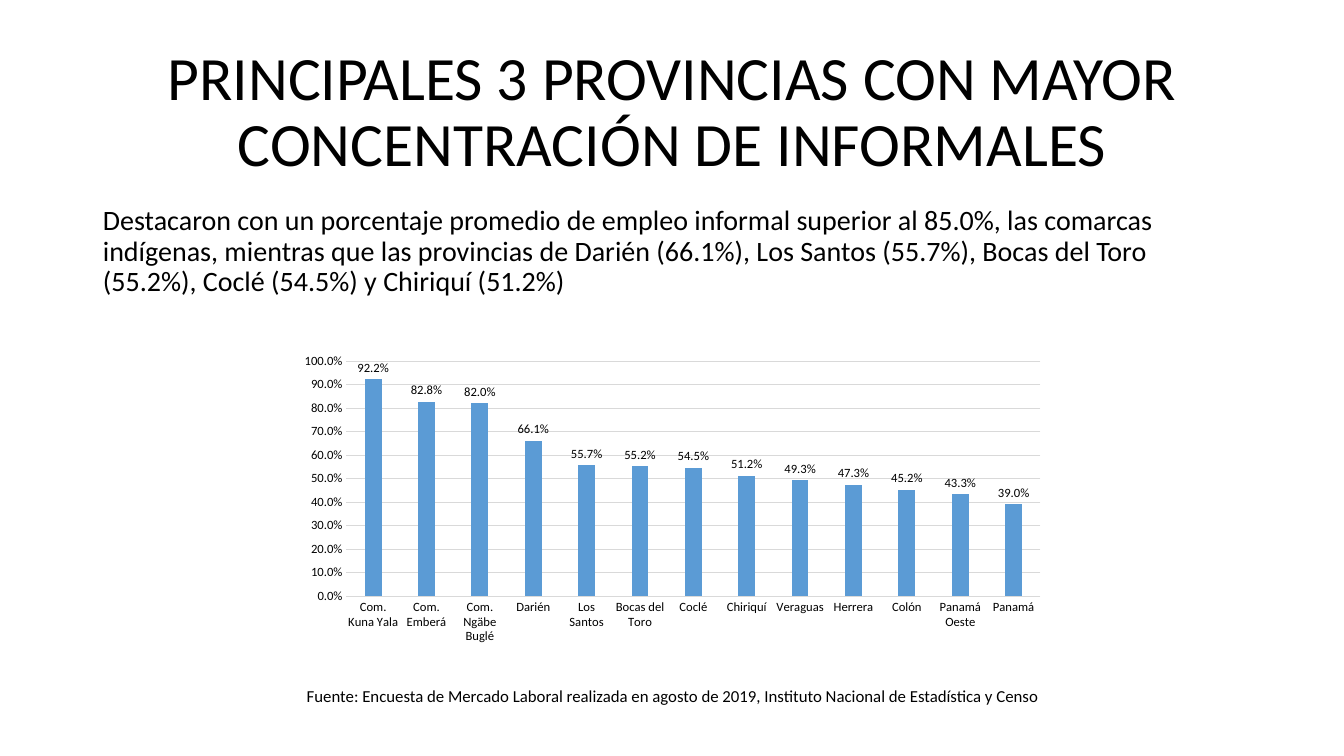
import pptx
import pptx.util
import pptx.chart.data
import pptx.dml.color
import pptx.enum.chart
import pptx.enum.text
import pptx.oxml.ns
from dataclasses import dataclass
from lxml import etree

Align = pptx.enum.text.PP_ALIGN
Anchor = pptx.enum.text.MSO_ANCHOR
EMU_PER_PX = 9144  # 100 px to the inch


@dataclass
class Theme:
    font: str = "Calibri"
    text: str = "000000"
    bar: str = "5B9BD5"
    grid: str = "D9D9D9"
    title_size: int = 44
    body_size: int = 20
    source_size: int = 12
    label_size: int = 9
    line_width: float = 0.75


def px(n):
    return pptx.util.Emu(n * EMU_PER_PX)


def rgb(color):
    return pptx.dml.color.RGBColor.from_string(color)


def style_font(font, theme, size):
    font.name = theme.font
    font.size = pptx.util.Pt(size)
    font.color.rgb = rgb(theme.text)


def write_text(tf, text, theme, size, align=Align.LEFT, anchor=Anchor.TOP,
               spacing=1.0, before=0):
    tf.word_wrap = True
    tf.auto_size = pptx.enum.text.MSO_AUTO_SIZE.NONE
    tf.vertical_anchor = anchor
    p = tf.paragraphs[0]
    p.alignment = align
    p.line_spacing = spacing
    p.space_before = pptx.util.Pt(before)
    r = p.add_run()
    r.text = text
    style_font(r.font, theme, size)
    return p


class SlideBuilder:
    def __init__(self, prs, theme):
        self.theme = theme
        self.slide = prs.slides.add_slide(prs.slide_layouts[1])

    def place(self, sp, box):
        sp.left, sp.top, sp.width, sp.height = map(px, box)

    def title(self, text, box):
        sp = self.slide.shapes.title
        self.place(sp, box)
        write_text(sp.text_frame, text, self.theme, self.theme.title_size,
                   align=Align.CENTER, anchor=Anchor.MIDDLE, spacing=0.9)

    def body(self, text, box):
        sp = self.slide.placeholders[1]
        self.place(sp, box)
        p = write_text(sp.text_frame, text, self.theme, self.theme.body_size,
                       spacing=0.9, before=10)
        # Plain paragraph: no bullet, no hanging indent
        pPr = p._p.get_or_add_pPr()
        pPr.set("marL", "0")
        pPr.set("indent", "0")
        etree.SubElement(pPr, pptx.oxml.ns.qn("a:buNone"))

    def caption(self, text, box):
        sp = self.slide.shapes.add_textbox(*map(px, box))
        write_text(sp.text_frame, text, self.theme, self.theme.source_size,
                   align=Align.CENTER)

    def line(self, fmt):
        fmt.line.color.rgb = rgb(self.theme.grid)
        fmt.line.width = pptx.util.Pt(self.theme.line_width)

    def column_chart(self, name, values, box, number_format):
        theme = self.theme
        data = pptx.chart.data.CategoryChartData(number_format=number_format)
        data.categories = list(values)
        data.add_series(name, list(values.values()))
        chart = self.slide.shapes.add_chart(
            pptx.enum.chart.XL_CHART_TYPE.COLUMN_CLUSTERED, *map(px, box), data).chart
        chart.has_legend = False
        chart.has_title = False
        style_font(chart.font, theme, 10)

        # Axes
        for axis in (chart.category_axis, chart.value_axis):
            axis.major_tick_mark = pptx.enum.chart.XL_TICK_MARK.NONE
            axis.minor_tick_mark = pptx.enum.chart.XL_TICK_MARK.NONE
            style_font(axis.tick_labels.font, theme, theme.label_size)
        self.line(chart.category_axis.format)
        value_axis = chart.value_axis
        value_axis.minimum_scale, value_axis.maximum_scale = 0, 1
        value_axis.major_unit = 0.1
        value_axis.format.line.fill.background()
        value_axis.has_major_gridlines = True
        self.line(value_axis.major_gridlines.format)
        value_axis.tick_labels.number_format = number_format
        value_axis.tick_labels.number_format_is_linked = False

        # Columns and their labels
        plot = chart.plots[0]
        plot.vary_by_categories = False
        plot.gap_width = 219
        plot.overlap = -27
        fill = plot.series[0].format.fill
        fill.solid()
        fill.fore_color.rgb = rgb(theme.bar)
        labels = plot.series[0].data_labels
        labels.show_value = True
        labels.position = pptx.enum.chart.XL_LABEL_POSITION.OUTSIDE_END
        labels.number_format = number_format
        labels.number_format_is_linked = False
        style_font(labels.font, theme, theme.label_size)


INFORMAL_SHARE = {
    "Com. Kuna Yala": 0.922,
    "Com. Emberá": 0.828,
    "Com. Ngäbe Buglé": 0.82,
    "Darién": 0.661,
    "Los Santos": 0.557,
    "Bocas del Toro": 0.552,
    "Coclé": 0.545,
    "Chiriquí": 0.512,
    "Veraguas": 0.493,
    "Herrera": 0.473,
    "Colón": 0.452,
    "Panamá Oeste": 0.433,
    "Panamá": 0.39,
}


def main():
    prs = pptx.Presentation()
    prs.slide_width, prs.slide_height = px(1333), px(750)
    s = SlideBuilder(prs, Theme())

    # Heading and summary
    s.title("PRINCIPALES 3 PROVINCIAS CON MAYOR CONCENTRACIÓN DE INFORMALES",
            (92, 40, 1150, 145))
    s.body("Destacaron con un porcentaje promedio de empleo informal superior al 85.0%, "
           "las comarcas indígenas, mientras que las provincias de Darién (66.1%), "
           "Los Santos (55.7%), Bocas del Toro (55.2%), Coclé (54.5%) y Chiriquí (51.2%)",
           (92, 200, 1127, 476))

    # Chart and its source
    s.column_chart("Series 1", INFORMAL_SHARE, (287, 345, 760, 300), "0.0%")
    s.caption("Fuente: Encuesta de Mercado Laboral realizada en agosto de 2019, "
              "Instituto Nacional de Estadística y Censo", (293, 675, 749, 30))

    prs.save("out.pptx")


if __name__ == "__main__":
    main()
